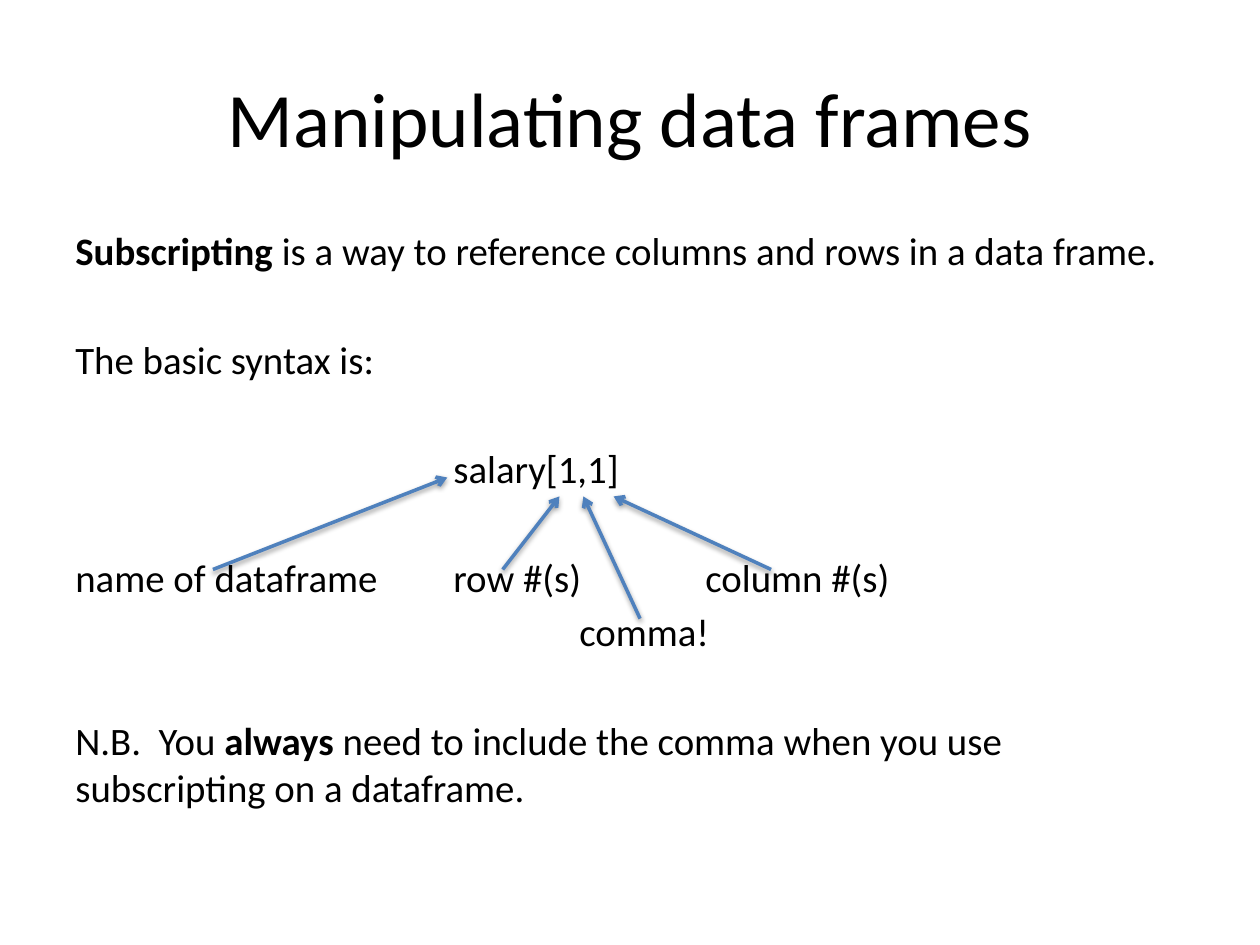
from lxml import etree
from pptx import Presentation
from pptx.dml.color import RGBColor
from pptx.enum.shapes import MSO_CONNECTOR
from pptx.enum.text import MSO_ANCHOR, PP_ALIGN
from pptx.oxml import parse_xml
from pptx.oxml.ns import nsdecls, qn
from pptx.util import Inches, Pt

COLORS = {"text": "000000", "arrow": "4F81BD", "shadow": "000000"}
FONT = "Calibri"
BODY_SIZE = 22.2
TIGHT, LOOSE = 4.4, 35.6

TITLE = "Manipulating data frames"
PARAGRAPHS = [
    ([("Subscripting", True),
      (" is a way to reference columns and rows in a data frame.", False)], 0, 0),
    ([("The basic syntax is:", False)], LOOSE, 0),
    ([("salary[1,1]", False)], LOOSE, 3),
    ([("name of dataframe\t\trow #(s)\t\tcolumn #(s)", False)], LOOSE, 0),
    ([("comma!", False)], TIGHT, 4),
    ([("N.B.  You ", False), ("always", True),
      (" need to include the comma when you use subscripting on a dataframe.", False)],
     LOOSE, 0),
]
ARROWS = [
    ((1.69, 4.52), (3.55, 3.79)),
    ((3.99, 4.52), (4.44, 3.94)),
    ((5.08, 4.91), (4.63, 3.94)),
    ((6.12, 4.52), (4.87, 3.94)),
]


def set_font(font, size):
    font.name, font.size = FONT, Pt(size)
    font.color.rgb = RGBColor.from_string(COLORS["text"])


def add_title(page):
    title = page.shapes.title
    title.left, title.top, title.width, title.height = map(Inches, (0.5, 0.3, 9, 1.25))
    title.text_frame.text = TITLE
    title.text_frame.vertical_anchor = MSO_ANCHOR.MIDDLE
    para = title.text_frame.paragraphs[0]
    para.alignment = PP_ALIGN.CENTER
    set_font(para.font, 44)


def add_body(page):
    box = page.shapes.add_textbox(*map(Inches, (0.5, 1.75, 9, 4.95)))
    frame = box.text_frame
    frame.word_wrap = True
    for index, (runs, before, indent) in enumerate(PARAGRAPHS):
        para = frame.add_paragraph() if index else frame.paragraphs[0]
        para.space_before = Pt(before)
        set_font(para.font, BODY_SIZE)
        for text, bold in runs:
            span = para.add_run()
            span.text, span.font.bold = text, bold
        props = para._p.get_or_add_pPr()
        props.set("marL", str(Inches(indent)))
        props.set("indent", "0")


def add_arrow(page, start, end):
    arrow = page.shapes.add_connector(MSO_CONNECTOR.STRAIGHT, *map(Inches, start + end))
    arrow.line.color.rgb = RGBColor.from_string(COLORS["arrow"])
    arrow.line.width = Pt(2)
    etree.SubElement(arrow.line._get_or_add_ln(), qn("a:tailEnd"), type="arrow")
    arrow._element.spPr.append(parse_xml(
        f'<a:effectLst {nsdecls("a")}><a:outerShdw blurRad="{Pt(3.1)}" dist="{Pt(1.6)}" '
        f'dir="5400000" rotWithShape="0"><a:srgbClr val="{COLORS["shadow"]}">'
        '<a:alpha val="38000"/></a:srgbClr></a:outerShdw></a:effectLst>'))


def main():
    """Build the slide on subscripting a data frame."""
    deck = Presentation()
    deck.slide_width, deck.slide_height = Inches(10), Inches(7.5)
    page = deck.slides.add_slide(deck.slide_layouts[5])
    add_title(page)
    add_body(page)
    for start, end in ARROWS:
        add_arrow(page, start, end)
    deck.save("out.pptx")


if __name__ == "__main__":
    main()
